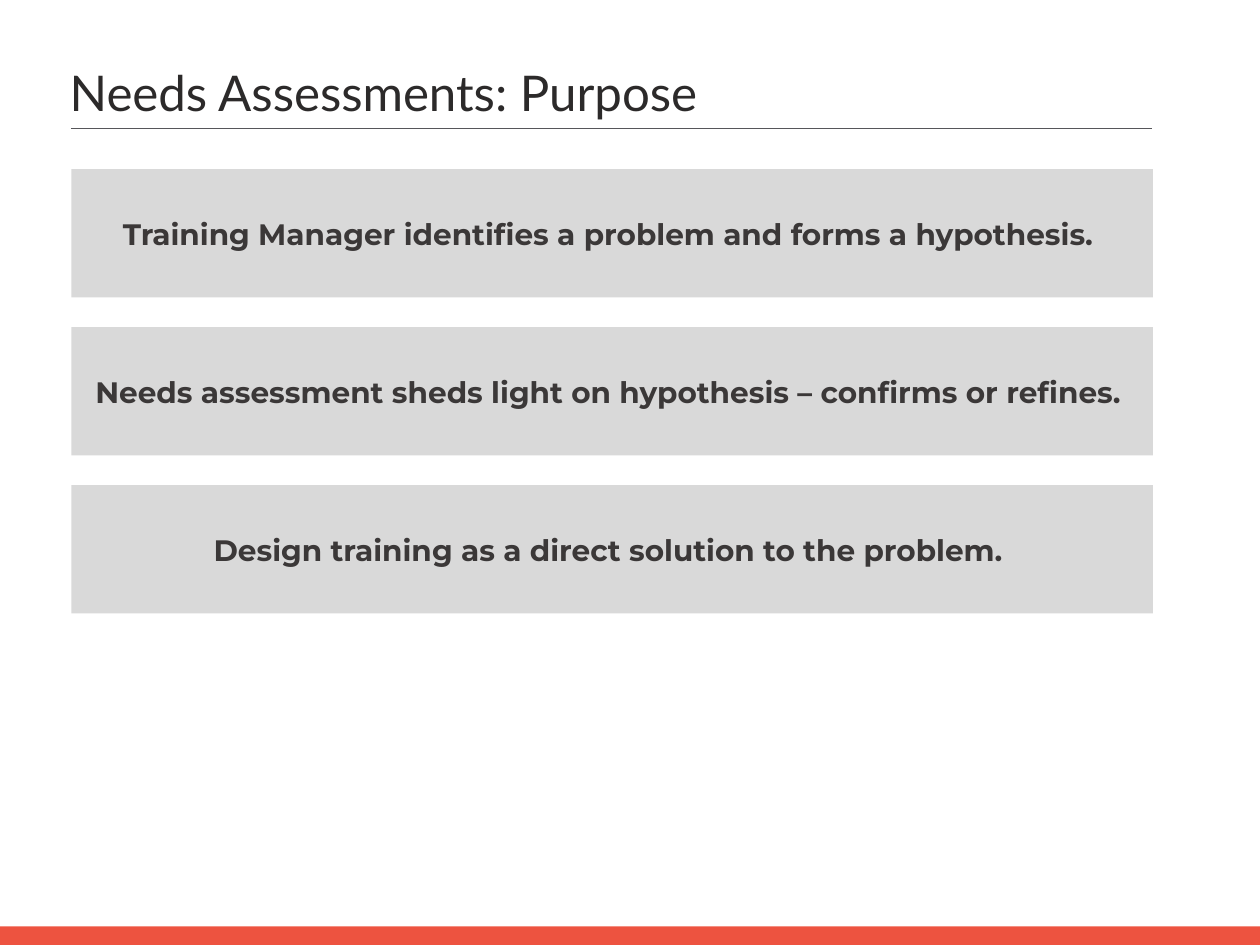
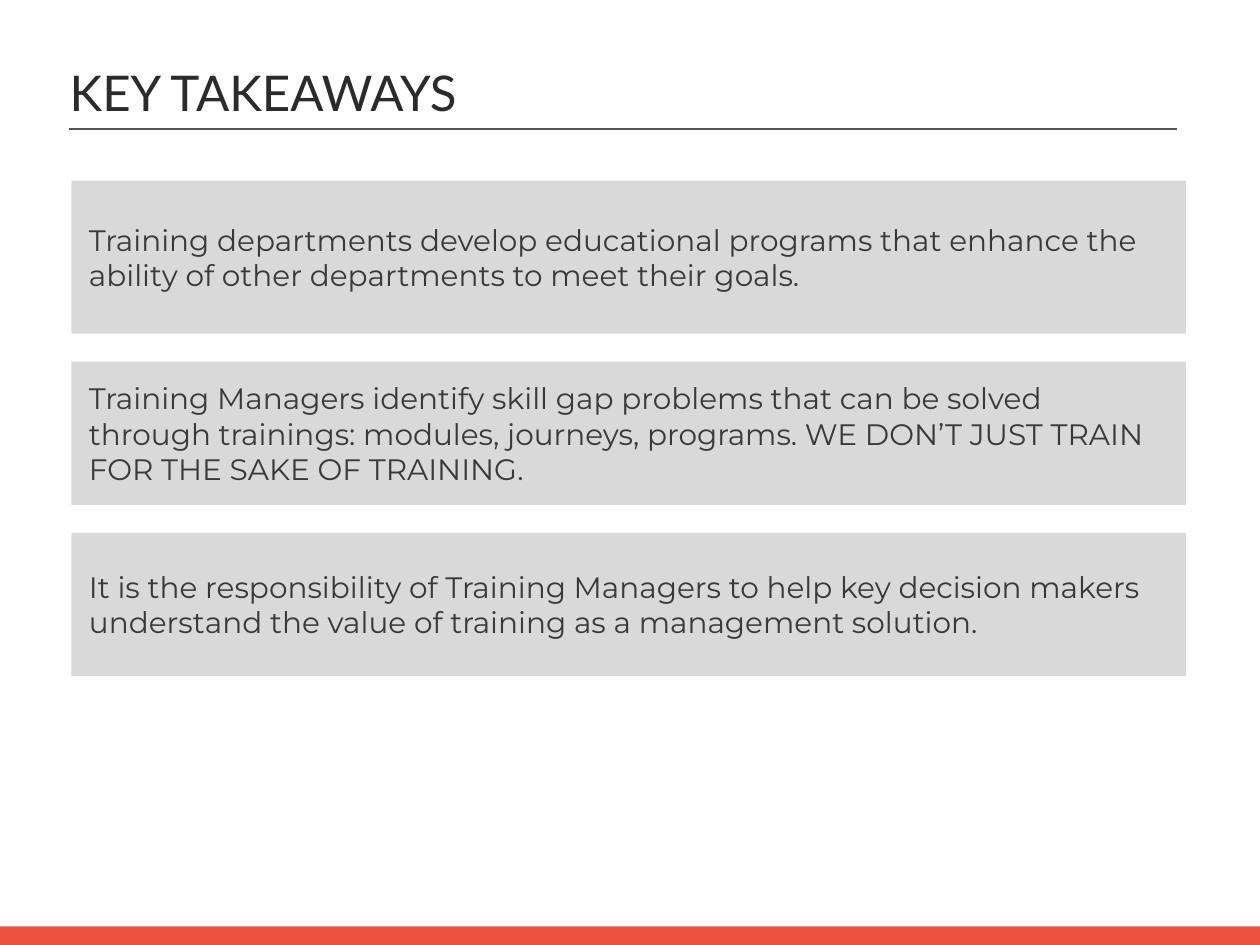
from lxml.etree import SubElement
from pptx import Presentation
from pptx.dml.color import RGBColor
from pptx.enum.shapes import MSO_CONNECTOR, MSO_SHAPE
from pptx.enum.text import MSO_ANCHOR, PP_ALIGN
from pptx.oxml.ns import qn
from pptx.util import Cm, Pt

COLORS = {"band": "ED5340", "card": "D9D9D9", "rule": "56565A",
          "title": "2C2A2A", "body": "3B3838"}
SLIDE_W, SLIDE_H = 36.12, 27.1
BAND_H = 0.53
TITLE_BOX = (1.75, 1.73, 32.46, 1.83)
TITLE = {"name": "Lato", "size": Pt(40), "bold": False}
BODY = {"name": "Montserrat", "size": Pt(24), "bold": False}
STATEMENT = {**BODY, "bold": True}


def rgb(name):
    return RGBColor.from_string(COLORS[name])


def add_rect(slide, box, color):
    sp = slide.shapes.add_shape(MSO_SHAPE.RECTANGLE, *map(Cm, box))
    sp.shadow.inherit = False
    sp.fill.solid()
    sp.fill.fore_color.rgb = rgb(color)
    sp.line.fill.background()
    return sp


def write(tf, text, font, color, align=PP_ALIGN.LEFT):
    tf.word_wrap = True
    tf.vertical_anchor = MSO_ANCHOR.MIDDLE
    p = tf.paragraphs[0]
    p.alignment = align
    r = p.add_run()
    r.text = text
    for key, value in font.items():
        setattr(r.font, key, value)
    r.font.color.rgb = rgb(color)


def add_rule(slide, x, y, width):
    line = slide.shapes.add_connector(
        MSO_CONNECTOR.STRAIGHT, Cm(x), Cm(y), Cm(x + width), Cm(y))
    line.line.color.rgb = rgb("rule")
    line.line.width = Pt(1)
    SubElement(line._element.spPr, qn("a:effectLst"))


def add_titled_slide(prs, title, rule):
    """Add a slide with the shared bottom band, title and title rule."""
    slide = prs.slides.add_slide(prs.slide_layouts[6])
    add_rect(slide, (0, SLIDE_H - BAND_H, SLIDE_W, BAND_H), "band")
    tb = slide.shapes.add_textbox(*map(Cm, TITLE_BOX))
    write(tb.text_frame, title, TITLE, "title")
    add_rule(slide, *rule)
    return slide


def add_cards(slide, origin, width, gap, cards, font, align):
    """Stack (height, text) cards downwards from origin."""
    x, y = origin
    for height, text in cards:
        sp = add_rect(slide, (x, y, width, height), "card")
        tf = sp.text_frame
        tf.margin_left = tf.margin_right = Cm(0.5)
        tf.margin_top = tf.margin_bottom = Cm(0.13)
        write(tf, text, font, "body", align)
        y += height + gap


def purpose_slide(prs):
    slide = add_titled_slide(prs, "Needs Assessments: Purpose", (2.03, 3.68, 31))
    texts = (
        "Training Manager identifies a problem and forms a hypothesis. ",
        "Needs assessment sheds light on hypothesis – confirms or refines. ",
        "Design training as a direct solution to the problem. ",
    )
    add_cards(slide, (2.05, 4.85), 31, 0.85, [(3.68, t) for t in texts],
              STATEMENT, PP_ALIGN.CENTER)


def takeaways_slide(prs):
    slide = add_titled_slide(prs, "KEY TAKEAWAYS", (1.98, 3.7, 31.75))
    cards = (
        (4.39, "Training departments develop educational programs that enhance "
               "the ability of other departments to meet their goals."),
        (4.11, "Training Managers identify skill gap problems that can be solved "
               "through trainings: modules, journeys, programs. WE DON’T JUST "
               "TRAIN FOR THE SAKE OF TRAINING."),
        (4.11, "It is the responsibility of Training Managers to help key "
               "decision makers understand the value of training as a "
               "management solution."),
    )
    add_cards(slide, (2.05, 5.18), 31.95, 0.8, cards, BODY, PP_ALIGN.LEFT)


def main():
    prs = Presentation()
    prs.slide_width, prs.slide_height = Cm(SLIDE_W), Cm(SLIDE_H)
    purpose_slide(prs)
    takeaways_slide(prs)
    prs.save("out.pptx")


if __name__ == "__main__":
    main()
